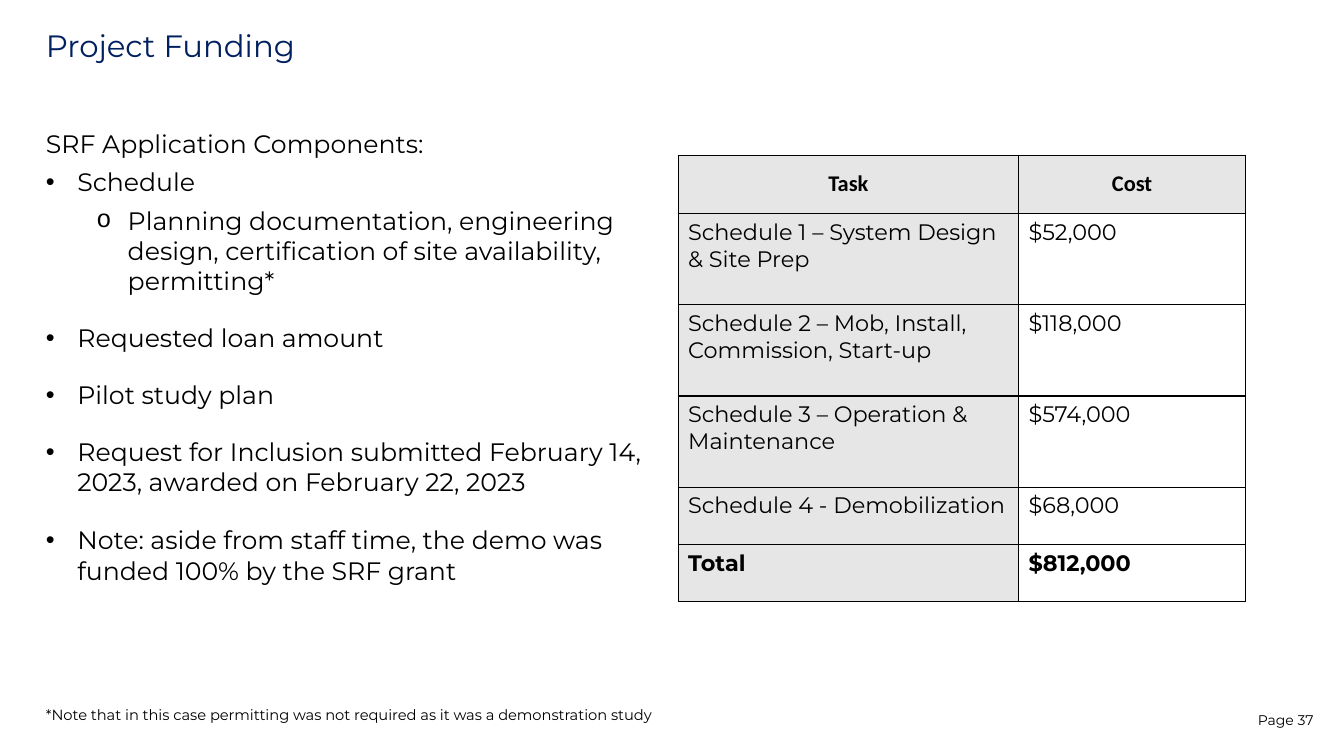
import pptx
import pptx.util
import pptx.dml.color
import pptx.enum.text
import pptx.oxml
import pptx.oxml.ns

Cm, Pt = pptx.util.Cm, pptx.util.Pt
ALIGN = pptx.enum.text.PP_ALIGN
ANCHOR = pptx.enum.text.MSO_ANCHOR


class Theme:
    font = "Montserrat"
    header_font = "Calibri"
    title_color = "002060"
    text_color = "000000"
    border_color = "000000"
    label_fill = "E7E6E6"
    value_fill = "FFFFFF"
    title_size = 22
    body_size = 18
    table_size = 16
    footnote_size = 10.5
    page_size = 10
    border_width = 1


TITLE = "Project Funding"
PAGE = "Page 37"
FOOTNOTE = "*Note that in this case permitting was not required as it was a demonstration study"

HEADING, BULLET, SUB = (0, 0, None), (0.79, -0.79, "•"), (2.06, -0.79, "o")
COMPONENTS = [
    (HEADING, 0, "SRF Application Components:"),
    (BULLET, 6, "Schedule"),
    (SUB, 6, "Planning documentation, engineering design, "
             "certification of site availability, permitting*"),
    (BULLET, 19, "Requested loan amount"),
    (BULLET, 19, "Pilot study plan"),
    (BULLET, 19, "Request for Inclusion submitted February 14, 2023, "
                 "awarded on February 22, 2023"),
    (BULLET, 20, "Note: aside from staff time, the demo was funded 100% by the SRF grant"),
]

COSTS = [
    ("Task", "Cost"),
    ("Schedule 1 – System Design & Site Prep", "$52,000"),
    ("Schedule 2 – Mob, Install, Commission, Start-up", "$118,000"),
    ("Schedule 3 – Operation & Maintenance", "$574,000"),
    ("Schedule 4 - Demobilization", "$68,000"),
    ("Total", "$812,000"),
]
COLUMN_WIDTHS = (8.58, 5.72)
ROW_HEIGHTS = (1.47, 2.3, 2.3, 2.3, 1.44, 1.44)
LEFT = 0.91


def rgb(color):
    return pptx.dml.color.RGBColor.from_string(color)


def add_run(p, text, size, color=Theme.text_color, font=Theme.font, bold=False):
    r = p.add_run()
    r.text = text
    r.font.size = Pt(size)
    r.font.name = font
    r.font.bold = bold
    r.font.color.rgb = rgb(color)


def add_box(s, left, top, width, height):
    tf = s.shapes.add_textbox(Cm(left), Cm(top), Cm(width), Cm(height)).text_frame
    tf.word_wrap = True
    return tf


def set_indent(p, margin, indent, bullet):
    pPr = p._p.get_or_add_pPr()
    pPr.set("marL", str(Cm(margin)))
    pPr.set("indent", str(Cm(indent)))
    if bullet:
        face = "Courier New" if bullet == "o" else "Arial"
        for tag, name, value in (("buFont", "typeface", face), ("buChar", "char", bullet)):
            item = pptx.oxml.parse_xml(
                f'<a:{tag} {pptx.oxml.ns.nsdecls("a")} {name}="{value}"/>')
            pPr.append(item)


def set_borders(cell):
    tcPr = cell._tc.get_or_add_tcPr()
    for i, side in enumerate(("lnL", "lnR", "lnT", "lnB")):
        tcPr.insert(i, pptx.oxml.parse_xml(
            f'<a:{side} {pptx.oxml.ns.nsdecls("a")} w="{Pt(Theme.border_width)}">'
            f'<a:solidFill><a:srgbClr val="{Theme.border_color}"/></a:solidFill>'
            f'</a:{side}>'))


def add_components(s):
    tf = add_box(s, LEFT, 3.1, 15.54, 13.39)
    for i, (level, gap, text) in enumerate(COMPONENTS):
        p = tf.paragraphs[0] if i == 0 else tf.add_paragraph()
        set_indent(p, *level)
        p.space_before = Pt(gap)
        add_run(p, text, Theme.body_size)


def add_costs(s):
    table = s.shapes.add_table(
        len(COSTS), len(COLUMN_WIDTHS), Cm(17.09), Cm(3.91),
        Cm(sum(COLUMN_WIDTHS)), Cm(sum(ROW_HEIGHTS))).table
    for column, width in zip(table.columns, COLUMN_WIDTHS):
        column.width = Cm(width)
    for i, (row, height) in enumerate(zip(COSTS, ROW_HEIGHTS)):
        table.rows[i].height = Cm(height)
        header, total = i == 0, i == len(COSTS) - 1
        for j, text in enumerate(row):
            cell = table.cell(i, j)
            cell.fill.solid()
            shaded = header or j == 0
            cell.fill.fore_color.rgb = rgb(Theme.label_fill if shaded else Theme.value_fill)
            cell.vertical_anchor = ANCHOR.MIDDLE if header else ANCHOR.TOP
            p = cell.text_frame.paragraphs[0]
            p.alignment = ALIGN.CENTER if header else ALIGN.LEFT
            add_run(p, text, Theme.table_size, bold=header or total,
                    font=Theme.header_font if header else Theme.font)
            set_borders(cell)


def main():
    prs = pptx.Presentation()
    prs.slide_width, prs.slide_height = Cm(33.87), Cm(19.05)
    s = prs.slides.add_slide(prs.slide_layouts[6])

    p = add_box(s, LEFT, 0.66, 31.67, 1.19).paragraphs[0]
    p.line_spacing = 0.9
    add_run(p, TITLE, Theme.title_size, Theme.title_color)

    add_components(s)
    add_costs(s)

    p = add_box(s, LEFT, 17.65, 27.76, 0.74).paragraphs[0]
    add_run(p, FOOTNOTE, Theme.footnote_size)

    p = add_box(s, 29.39, 17.81, 3.96, 1.02).paragraphs[0]
    p.alignment = ALIGN.RIGHT
    add_run(p, PAGE, Theme.page_size)

    prs.save("out.pptx")


if __name__ == "__main__":
    main()
